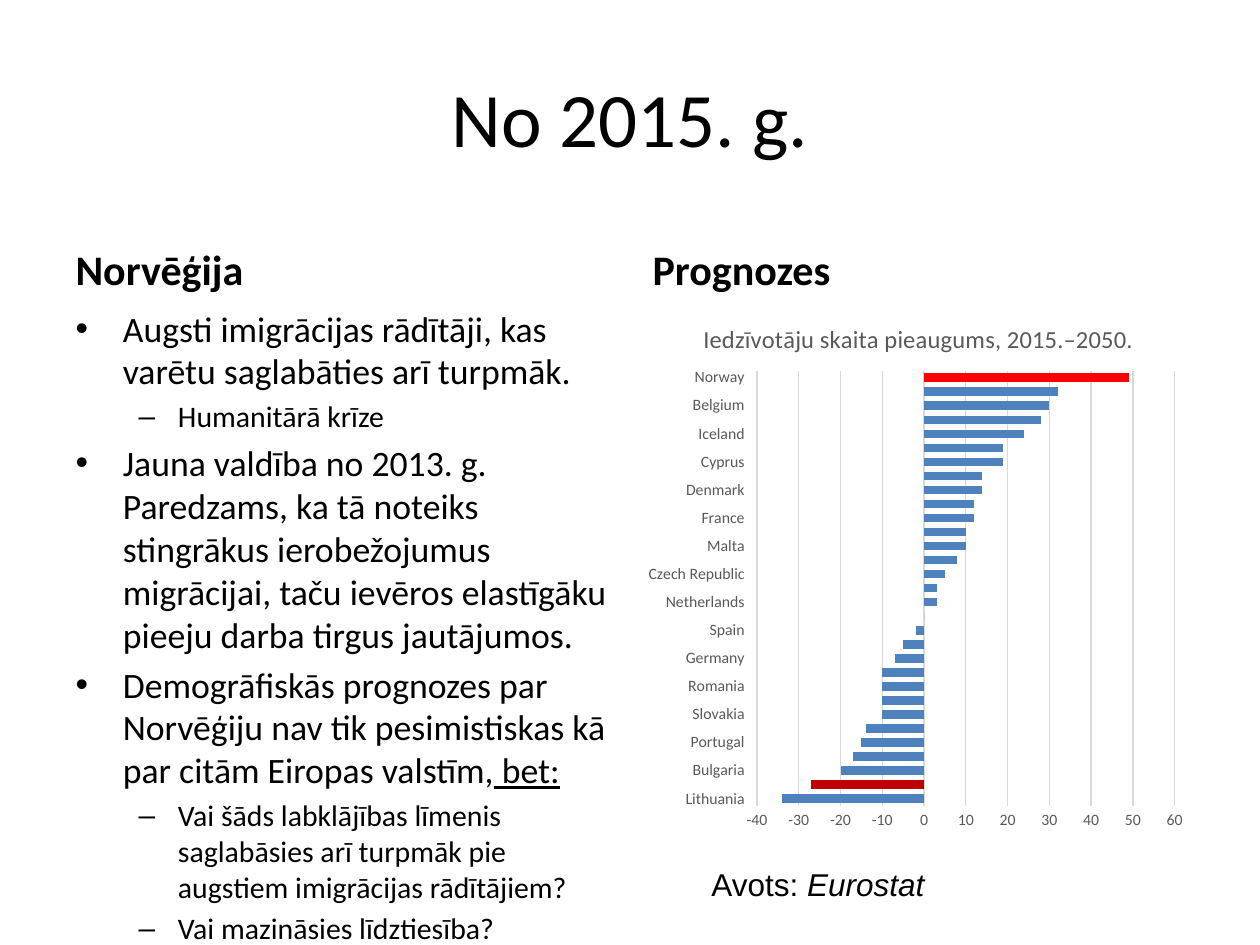
"""Build a comparison slide with Norwegian migration notes and a population growth chart."""
import lxml.etree
import pptx
import pptx.chart.data
import pptx.dml.color
import pptx.enum.chart
import pptx.enum.text
import pptx.oxml
import pptx.oxml.ns
import pptx.util

SCALE = 914400 / 126
LEFT, RIGHT, COLUMN_WIDTH = 63, 640, 557
HEADING_TOP, HEADING_HEIGHT = 212, 88
CONTENT_TOP, CONTENT_HEIGHT = 300, 544


def px(*lengths):
    return [pptx.util.Emu(round(length * SCALE)) for length in lengths]


def color(value):
    return pptx.dml.color.RGBColor.from_string(value)


presentation = pptx.Presentation()
presentation.slide_width, presentation.slide_height = px(1260, 945)
slide = presentation.slides.add_slide(presentation.slide_layouts[4])
title, left_heading, notes, right_heading, chart_slot = slide.placeholders
chart_slot.element.getparent().remove(chart_slot.element)

single_texts = [
    (title, "No 2015. g.", (63, 38, 1134, 157), 44, False),
    (left_heading, "Norvēģija", (LEFT, HEADING_TOP, COLUMN_WIDTH, HEADING_HEIGHT), 24, True),
    (right_heading, "Prognozes", (RIGHT, HEADING_TOP, COLUMN_WIDTH, HEADING_HEIGHT), 24, True),
]
for shape, text, box, size, bold in single_texts:
    shape.left, shape.top, shape.width, shape.height = px(*box)
    shape.text_frame.text = text
    shape.text_frame.auto_size = pptx.enum.text.MSO_AUTO_SIZE.NONE
    font = shape.text_frame.paragraphs[0].font
    font.name, font.size, font.bold = "Calibri", pptx.util.Pt(size), bold
    font.color.rgb = color("000000")

notes.left, notes.top, notes.width, notes.height = px(LEFT, CONTENT_TOP, COLUMN_WIDTH, CONTENT_HEIGHT)
notes.text_frame.auto_size = pptx.enum.text.MSO_AUTO_SIZE.NONE
bullets = [
    (0, "Augsti imigrācijas rādītāji, kas varētu saglabāties arī turpmāk.", ""),
    (1, "Humanitārā krīze", ""),
    (0, "Jauna valdība no 2013. g. Paredzams, ka tā noteiks stingrākus ierobežojumus "
        "migrācijai, taču ievēros elastīgāku pieeju darba tirgus jautājumos.", ""),
    (0, "Demogrāfiskās prognozes par Norvēģiju nav tik pesimistiskas kā par citām "
        "Eiropas valstīm,", " bet:"),
    (1, "Vai šāds labklājības līmenis saglabāsies arī turpmāk pie augstiem "
        "imigrācijas rādītājiem?", ""),
    (1, "Vai mazināsies līdztiesība?", ""),
]
for index, (level, text, underlined) in enumerate(bullets):
    paragraph = notes.text_frame.add_paragraph() if index else notes.text_frame.paragraphs[0]
    paragraph.level = level
    paragraph.add_run().text = text
    if underlined:
        run = paragraph.add_run()
        run.text = underlined
        run.font.underline = True
    paragraph.font.name = "Calibri"
    paragraph.font.size = pptx.util.Pt(17 if level else 20.4)
    paragraph.font.color.rgb = color("000000")

growth = {
    "Lithuania": -34, "Latvia": -27, "Bulgaria": -20, "Greece": -17, "Portugal": -15,
    "Estonia": -14, "Slovakia": -10, "Croatia": -10, "Romania": -10, "Poland": -10,
    "Germany": -7, "Hungary": -5, "Spain": -2, "Slovenia": 0, "Netherlands": 3,
    "EU (28 countries)": 3, "Czech Republic": 5, "Ireland": 8, "Malta": 10, "Italy": 10,
    "France": 12, "Finland": 12, "Denmark": 14, "Austria": 14, "Cyprus": 19,
    "United Kingdom": 19, "Iceland": 24, "Sweden": 28, "Belgium": 30, "Switzerland": 32,
    "Norway": 49,
}
chart_data = pptx.chart.data.CategoryChartData(number_format="0")
chart_data.categories = list(growth)
chart_data.add_series("Series 1", list(growth.values()))
chart = slide.shapes.add_chart(
    pptx.enum.chart.XL_CHART_TYPE.BAR_CLUSTERED,
    *px(RIGHT, CONTENT_TOP, COLUMN_WIDTH, CONTENT_HEIGHT), chart_data).chart
chart.has_legend = False
chart.font.name, chart.font.size = "Calibri", pptx.util.Pt(10)
chart.font.color.rgb = color("000000")

chart.has_title = True
chart.chart_title.include_in_layout = False
chart.chart_title.text_frame.text = "Iedzīvotāju skaita pieaugums, 2015.–2050."
title_font = chart.chart_title.text_frame.paragraphs[0].font
title_font.name, title_font.size, title_font.bold = "Calibri", pptx.util.Pt(14), False
title_font.color.rgb = color("595959")

plot = chart.plots[0]
plot.gap_width = 64
plot.vary_by_categories = False
series = plot.series[0]
series.invert_if_negative = False
series.format.fill.solid()
series.format.fill.fore_color.rgb = color("4F81BD")
for country, shade in (("Latvia", "C00000"), ("Norway", "FF0000")):
    fill = series.points[list(growth).index(country)].format.fill
    fill.solid()
    fill.fore_color.rgb = color(shade)

for axis in (chart.category_axis, chart.value_axis):
    axis.major_tick_mark = axis.minor_tick_mark = pptx.enum.chart.XL_TICK_MARK.NONE
    axis.tick_labels.font.name = "Calibri"
    axis.tick_labels.font.size = pptx.util.Pt(9)
    axis.tick_labels.font.color.rgb = color("595959")
chart.category_axis.tick_label_position = pptx.enum.chart.XL_TICK_LABEL_POSITION.LOW
chart.value_axis.minimum_scale, chart.value_axis.maximum_scale = -40, 60
chart.value_axis.major_unit = 10
chart.value_axis.format.line.fill.background()
for line in (chart.category_axis.format.line, chart.value_axis.major_gridlines.format.line):
    line.color.rgb = color("D9D9D9")
    line.width = pptx.util.Pt(0.75)

plot_area = chart.element.find(".//" + pptx.oxml.ns.qn("c:plotArea"))
for old_layout in plot_area.findall(pptx.oxml.ns.qn("c:layout")):
    plot_area.remove(old_layout)
layout = lxml.etree.Element(pptx.oxml.ns.qn("c:layout"))
manual = lxml.etree.SubElement(layout, pptx.oxml.ns.qn("c:manualLayout"))
for tag, value in (("layoutTarget", "inner"), ("xMode", "edge"), ("yMode", "edge"),
                   ("x", "0.21"), ("y", "0.13"), ("w", "0.75"), ("h", "0.8")):
    lxml.etree.SubElement(manual, pptx.oxml.ns.qn("c:" + tag)).set("val", value)
plot_area.insert(0, layout)

source = slide.shapes.add_textbox(*px(699, 859, 357, 50))
source.text_frame.word_wrap = True
paragraph = source.text_frame.paragraphs[0]
for text, italic in (("Avots: ", False), ("Eurostat", True)):
    run = paragraph.add_run()
    run.text = text
    run.font.italic = italic
paragraph.font.name, paragraph.font.size = "Arial", pptx.util.Pt(18)
paragraph.font.color.rgb = color("000000")

presentation.save("out.pptx")
